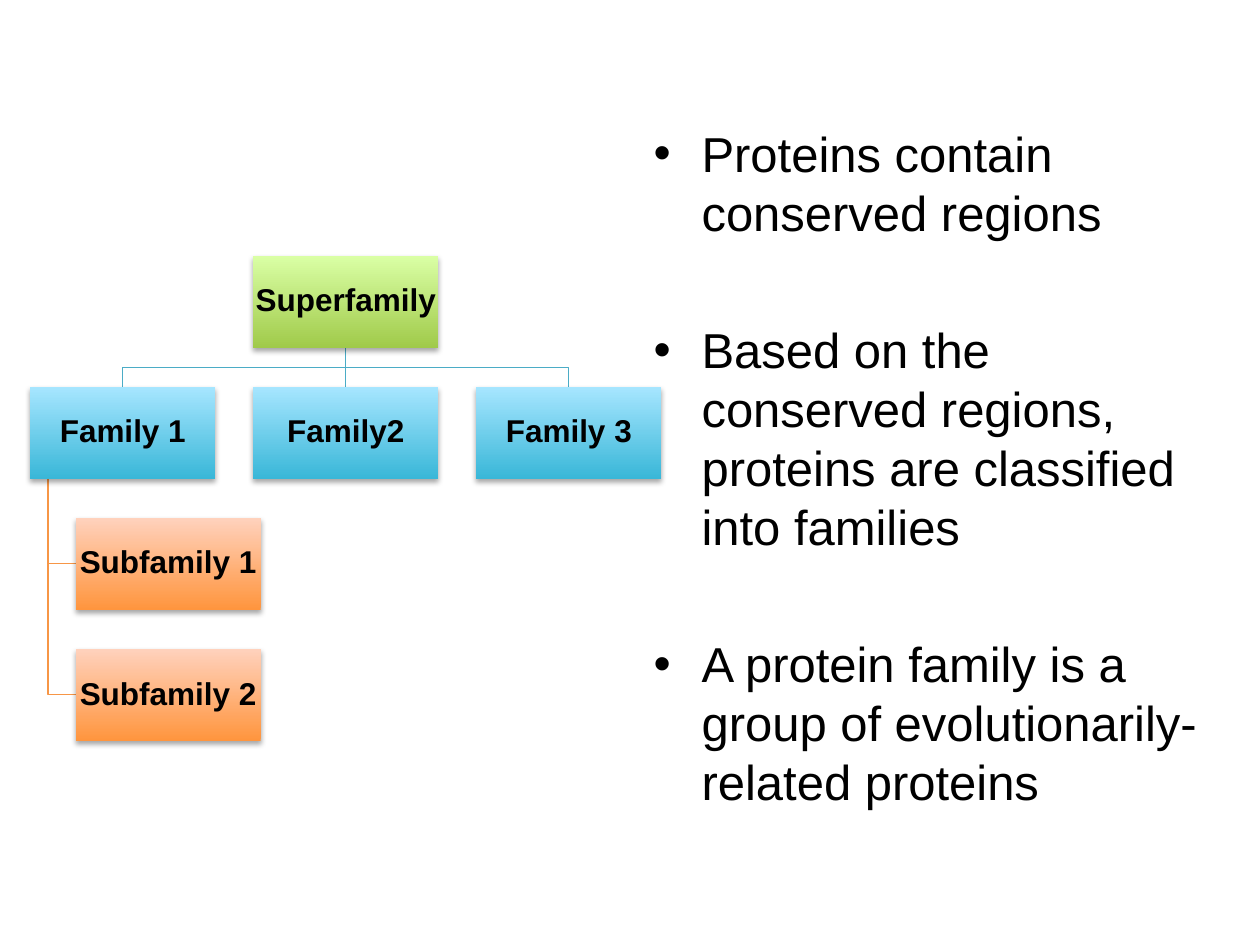
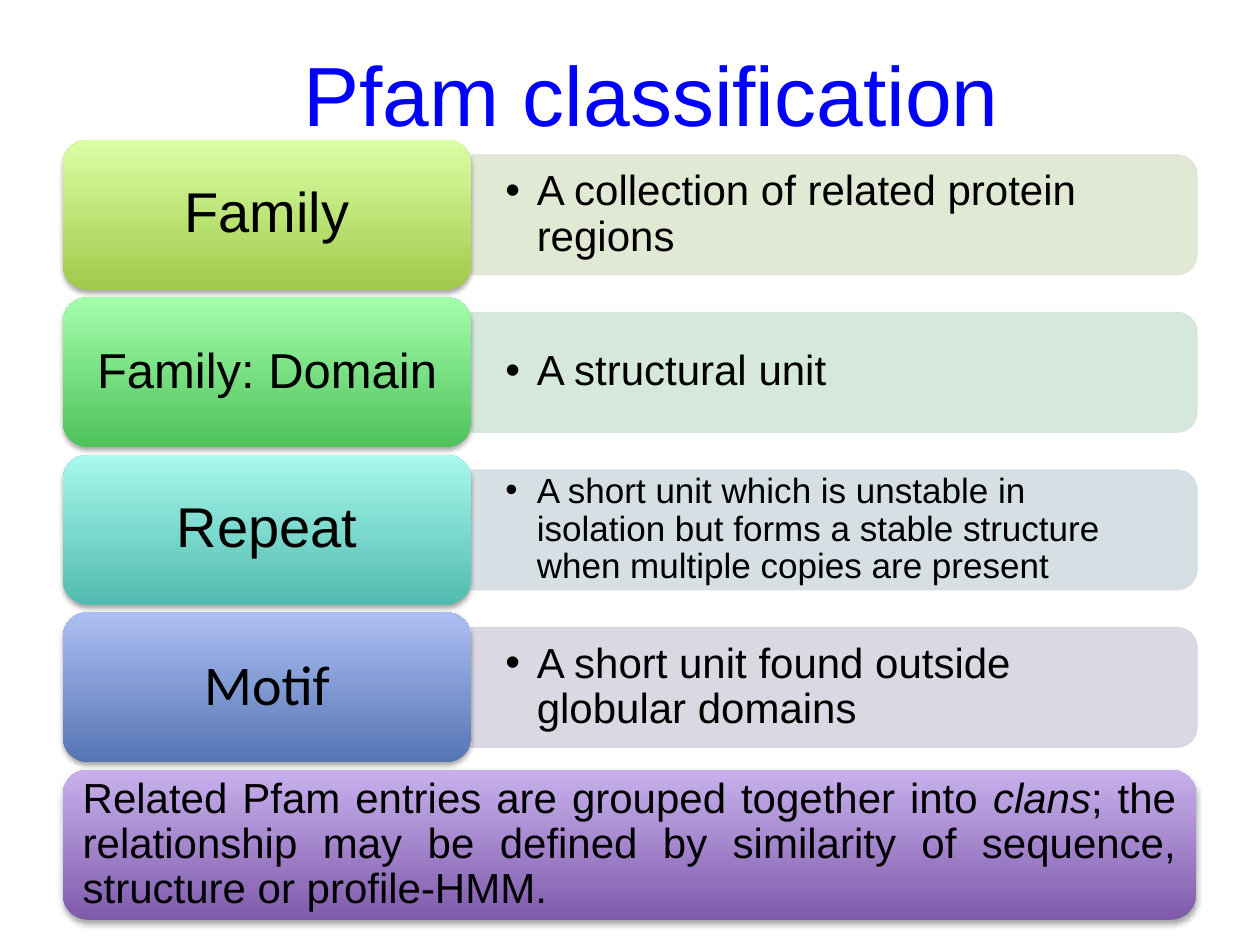
from lxml import etree
from pptx import Presentation
from pptx.dml.color import RGBColor
from pptx.enum.shapes import MSO_CONNECTOR, MSO_SHAPE
from pptx.enum.text import MSO_ANCHOR, PP_ALIGN
from pptx.oxml.ns import qn
from pptx.util import Inches, Pt

RECT = MSO_SHAPE.RECTANGLE
ROUNDED = MSO_SHAPE.ROUNDED_RECTANGLE
ROUND_SIDE = MSO_SHAPE.ROUND_2_SAME_RECTANGLE
STRAIGHT = MSO_CONNECTOR.STRAIGHT
MIDDLE = MSO_ANCHOR.MIDDLE
TOP = MSO_ANCHOR.TOP
LEFT, CENTER, JUSTIFY = PP_ALIGN.LEFT, PP_ALIGN.CENTER, PP_ALIGN.JUSTIFY

BLACK = RGBColor(0x00, 0x00, 0x00)
TITLE_BLUE = RGBColor(0x00, 0x00, 0xFF)
AQUA_LINE = RGBColor(0x4B, 0xAC, 0xC6)
ORANGE_LINE = RGBColor(0xF7, 0x96, 0x46)

# Gradients run from the bottom colour to the top colour
LIME = RGBColor(0xA0, 0xCA, 0x4A), RGBColor(0xDA, 0xFF, 0xA5)
AQUA = RGBColor(0x39, 0xB7, 0xD8), RGBColor(0xA7, 0xE6, 0xFF)
ORANGE = RGBColor(0xFF, 0x95, 0x3E), RGBColor(0xFF, 0xD2, 0xBD)
GREEN = RGBColor(0x4E, 0xC2, 0x5B), RGBColor(0xA4, 0xFE, 0xAB)
TEAL = RGBColor(0x52, 0xBB, 0xAF), RGBColor(0xA8, 0xF8, 0xED)
BLUE = RGBColor(0x56, 0x75, 0xB3), RGBColor(0xAC, 0xBF, 0xF3)
PURPLE = RGBColor(0x7F, 0x5B, 0xAB), RGBColor(0xC8, 0xB0, 0xED)

PALE_LIME = RGBColor(0xDE, 0xE7, 0xD1)
PALE_GREEN = RGBColor(0xD2, 0xE5, 0xD9)
PALE_TEAL = RGBColor(0xD2, 0xDC, 0xE2)
PALE_BLUE = RGBColor(0xD8, 0xD3, 0xE0)

SANS = "Arial"

# Family tree grid, in inches
NODE_W, NODE_H = 1.47, 0.73
TREE_LEFT, TREE_TOP = 0.24, 2.03
COLUMN_STEP, LEVEL_STEP = 1.77, 1.04
SUBFAMILY_LEFT = 0.6
TRUNK_X = 0.38

# Classification rows, in inches
ROW_LEFT, ROW_TOP, ROW_STEP = 0.5, 1.11, 1.25
LABEL_W, LABEL_H = 3.24, 1.19
BAR_W, BAR_H = 5.76, 0.95
BANNER_W = 8.99


def add_run(paragraph, text, size, font=SANS, color=BLACK, bold=False, italic=False):
    run = paragraph.add_run()
    run.text = text
    run.font.name = font
    run.font.size = Pt(size)
    run.font.bold = bold
    run.font.italic = italic
    run.font.color.rgb = color


def set_frame(frame, anchor, inset_x=0.1, inset_y=0.05):
    frame.word_wrap = True
    frame.vertical_anchor = anchor
    frame.margin_left = frame.margin_right = Inches(inset_x)
    frame.margin_top = frame.margin_bottom = Inches(inset_y)


def add_text_box(slide, left, top, width, height, anchor, **insets):
    box = slide.shapes.add_textbox(Inches(left), Inches(top), Inches(width), Inches(height))
    set_frame(box.text_frame, anchor, **insets)
    return box.text_frame


def make_bullet(paragraph, indent):
    properties = paragraph._p.get_or_add_pPr()
    properties.set("marL", str(Inches(indent)))
    properties.set("indent", str(-Inches(indent)))
    etree.SubElement(properties, qn("a:buFont"), typeface=SANS)
    etree.SubElement(properties, qn("a:buChar"), char="•")


def add_alpha(color_element, percent):
    etree.SubElement(color_element, qn("a:alpha"), val=str(percent * 1000))


def add_soft_shadow(shape):
    shape.shadow.inherit = False
    effects = shape._element.spPr.find(qn("a:effectLst"))
    shadow = etree.SubElement(effects, qn("a:outerShdw"), blurRad="40000", dist="23000",
                              dir="5400000", rotWithShape="0")
    add_alpha(etree.SubElement(shadow, qn("a:srgbClr"), val="000000"), 35)


def add_tile(slide, kind, left, top, width, height, gradient, align=CENTER, **insets):
    """Gradient tile with a soft shadow; returns its paragraph for the label."""
    tile = slide.shapes.add_shape(kind, Inches(left), Inches(top), Inches(width), Inches(height))
    tile.fill.gradient()
    tile.fill.gradient_angle = 90
    for stop, color in zip(tile.fill.gradient_stops, gradient):
        stop.color.rgb = color
    tile.line.fill.background()
    add_soft_shadow(tile)
    set_frame(tile.text_frame, MIDDLE, **insets)
    label = tile.text_frame.paragraphs[0]
    label.alignment = align
    label.line_spacing = 0.9
    return label


# Family tree parts

def add_node(slide, left, level, text, gradient):
    label = add_tile(slide, RECT, left, TREE_TOP + level * LEVEL_STEP, NODE_W, NODE_H,
                     gradient, inset_x=0.01, inset_y=0.01)
    add_run(label, text, 18, bold=True)


def add_branch(slide, color, points):
    start, *rest = [(Inches(x), Inches(y)) for x, y in points]
    builder = slide.shapes.build_freeform(*start)
    builder.add_line_segments(rest, close=False)
    branch = builder.convert_to_shape()
    branch.fill.background()
    branch.line.color.rgb = color
    branch.line.width = Pt(0.75)
    branch.shadow.inherit = False


def add_stem(slide, color, x, top, bottom):
    stem = slide.shapes.add_connector(STRAIGHT, Inches(x), Inches(top), Inches(x), Inches(bottom))
    stem.line.color.rgb = color
    stem.line.width = Pt(0.75)
    etree.SubElement(stem._element.spPr, qn("a:effectLst"))


def add_family_tree(slide):
    columns = [TREE_LEFT + i * COLUMN_STEP for i in range(3)]
    centers = [left + NODE_W / 2 for left in columns]
    root_x = centers[1]
    root_bottom = TREE_TOP + NODE_H
    family_top = TREE_TOP + LEVEL_STEP
    fork_y = (root_bottom + family_top) / 2

    # Lines
    for x in (centers[2], centers[0]):
        add_branch(slide, AQUA_LINE, [(root_x, root_bottom), (root_x, fork_y),
                                      (x, fork_y), (x, family_top)])
    add_stem(slide, AQUA_LINE, root_x, root_bottom, family_top)
    for level in (3, 2):
        y = TREE_TOP + level * LEVEL_STEP + NODE_H / 2
        add_branch(slide, ORANGE_LINE, [(TRUNK_X, family_top + NODE_H), (TRUNK_X, y),
                                        (SUBFAMILY_LEFT, y)])

    # Nodes
    add_node(slide, columns[1], 0, "Superfamily", LIME)
    for left, family in zip(columns, ("Family 1", "Family2", "Family 3")):
        add_node(slide, left, 1, family, AQUA)
    for level, subfamily in enumerate(("Subfamily 1", "Subfamily 2"), start=2):
        add_node(slide, SUBFAMILY_LEFT, level, subfamily, ORANGE)


def add_key_points(slide, points):
    frame = add_text_box(slide, 5.09, 0.93, 4.67, 6.06, TOP)
    for i, point in enumerate(points):
        paragraph = frame.paragraphs[0] if i == 0 else frame.add_paragraph()
        make_bullet(paragraph, 0.38)
        if i:
            paragraph.space_before = Pt(45)
        add_run(paragraph, point, 28)


# Classification parts

def add_description_bar(slide, left, center_y, color):
    """Bar turned a quarter so that its rounded side faces right."""
    center_x = left + BAR_W / 2
    bar = slide.shapes.add_shape(ROUND_SIDE, Inches(center_x - BAR_H / 2),
                                 Inches(center_y - BAR_W / 2), Inches(BAR_H), Inches(BAR_W))
    bar.rotation = 90
    bar.shadow.inherit = False
    bar.fill.solid()
    bar.fill.fore_color.rgb = color
    bar.line.color.rgb = color
    bar.line.width = Pt(0.75)
    for color_element in bar._element.spPr.iter(qn("a:srgbClr")):
        add_alpha(color_element, 90)


def add_class_row(slide, index, name, name_size, font, gradient, description, size, pale):
    top = ROW_TOP + index * ROW_STEP
    center_y = top + LABEL_H / 2
    bar_left = ROW_LEFT + LABEL_W
    add_description_bar(slide, bar_left, center_y, pale)
    frame = add_text_box(slide, bar_left, center_y - 0.43, 5.71, 0.86, MIDDLE,
                         inset_x=0.27, inset_y=0.14)
    paragraph = frame.paragraphs[0]
    make_bullet(paragraph, 0.25)
    paragraph.alignment = LEFT
    paragraph.line_spacing = 0.9
    add_run(paragraph, description, size)
    label = add_tile(slide, ROUNDED, ROW_LEFT, top, LABEL_W, LABEL_H, gradient,
                     inset_x=0.12, inset_y=0.07)
    add_run(label, name, name_size, font)


def add_clan_banner(slide, index):
    note = add_tile(slide, ROUNDED, ROW_LEFT, ROW_TOP + index * ROW_STEP, BANNER_W, LABEL_H,
                    PURPLE, align=JUSTIFY)
    add_run(note, "Related Pfam entries are grouped together into ", 24)
    add_run(note, "clans", 24, italic=True)
    add_run(note, "; the relationship may be defined by similarity of sequence, "
                  "structure or profile-HMM.", 24)


def add_title(slide, text):
    title = add_text_box(slide, 0.67, 0.11, 9, 1.25, MIDDLE).paragraphs[0]
    title.alignment = CENTER
    add_run(title, text, 48, color=TITLE_BLUE)


def main():
    deck = Presentation()
    deck.slide_width, deck.slide_height = Inches(10), Inches(7.5)
    blank = deck.slide_layouts[6]

    # Slide 1: protein families
    families = deck.slides.add_slide(blank)
    add_key_points(families, [
        "Proteins contain conserved regions",
        "Based on the conserved regions, proteins are classified into families",
        "A protein family is a group of evolutionarily-related proteins",
    ])
    add_family_tree(families)

    # Slide 2: classification
    classification = deck.slides.add_slide(blank)
    rows = [
        ("Family", 32, SANS, LIME, "A collection of related protein regions", 24, PALE_LIME),
        ("Family: Domain", 28, SANS, GREEN, "A structural unit", 24, PALE_GREEN),
        ("Repeat", 32, SANS, TEAL, "A short unit which is unstable in isolation but forms "
         "a stable structure when multiple copies are present", 20, PALE_TEAL),
        ("Motif", 32, "Calibri", BLUE, "A short unit found outside globular domains", 24,
         PALE_BLUE),
    ]
    for index, row in enumerate(rows):
        add_class_row(classification, index, *row)
    add_clan_banner(classification, len(rows))
    add_title(classification, "Pfam classification")

    deck.save("out.pptx")


if __name__ == "__main__":
    main()
